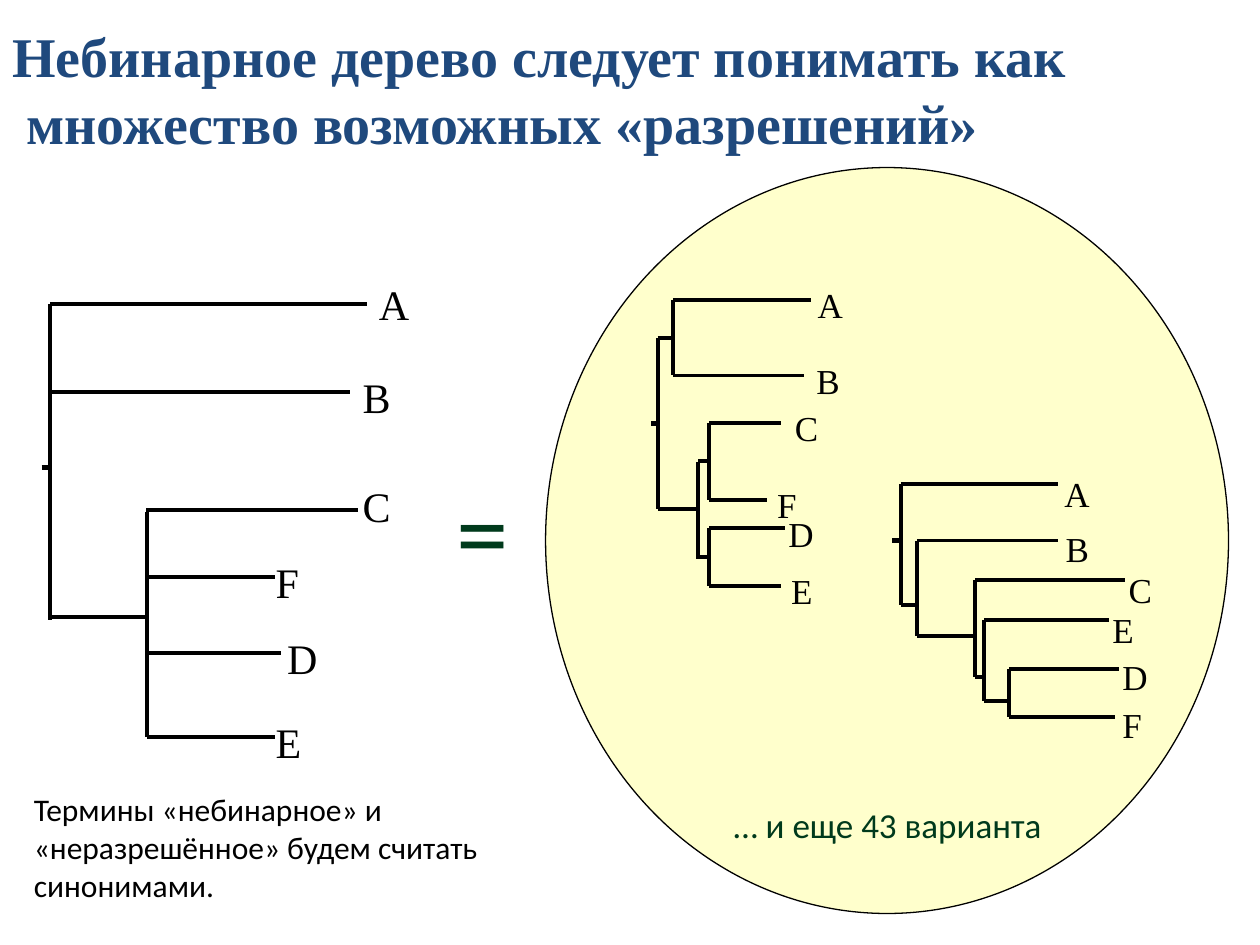
"""Build a slide that shows a non-binary tree as a set of possible resolutions."""
import pptx
import pptx.dml.color
import pptx.enum.shapes
import pptx.enum.text
import pptx.oxml.ns
import pptx.util
import lxml.etree

THEME = {
    "serif": "Times New Roman", "sans": "Calibri",
    "title": "1F497D", "accent": "003A1C", "ink": "000000", "pool": "FFFFCC",
    "title_size": 32, "equals_size": 60, "count_size": 20, "note_size": 18,
    "branch": 2.25, "root": 3, "outline": 0.75,
}
LETTER_EM = {"A": 0.72, "B": 0.67, "C": 0.67, "D": 0.72, "E": 0.61, "F": 0.56}
LEFT = pptx.enum.text.PP_ALIGN.LEFT
CENTER = pptx.enum.text.PP_ALIGN.CENTER
TOP = pptx.enum.text.MSO_ANCHOR.TOP
MIDDLE = pptx.enum.text.MSO_ANCHOR.MIDDLE

deck = pptx.Presentation()
deck.slide_width = pptx.util.Inches(10)
deck.slide_height = pptx.util.Inches(7.5)
column = deck.slide_width / 10
row = deck.slide_height / 7.5
slide = deck.slides.add_slide(deck.slide_layouts[6])


def add_text(lines, left, top, width, height, font, size, color,
             align=LEFT, anchor=TOP, wrap=False, bold=False, insets=(0.1, 0.05)):
    box = slide.shapes.add_textbox(
        round(left * column), round(top * row), round(width * column), round(height * row))
    frame = box.text_frame
    frame.word_wrap = wrap
    frame.vertical_anchor = anchor
    frame.margin_left = frame.margin_right = round(0.1 * column)
    frame.margin_top, frame.margin_bottom = (round(inset * row) for inset in insets)
    frame.text = "\n".join(lines)
    for paragraph in frame.paragraphs:
        paragraph.alignment = align
        paragraph.font.name = font
        paragraph.font.size = pptx.util.Pt(size)
        paragraph.font.bold = bold
        paragraph.font.color.rgb = pptx.dml.color.RGBColor.from_string(color)
    return frame


def add_branch(x1, y1, x2, y2, weight):
    branch = slide.shapes.add_connector(
        pptx.enum.shapes.MSO_CONNECTOR.STRAIGHT,
        round(x1 * column), round(y1 * row), round(x2 * column), round(y2 * row))
    branch.line.width = pptx.util.Pt(weight)
    branch.line.color.rgb = pptx.dml.color.RGBColor.from_string(THEME["ink"])
    lxml.etree.SubElement(branch._element.spPr, pptx.oxml.ns.qn("a:effectLst"))


pool = slide.shapes.add_shape(
    pptx.enum.shapes.MSO_SHAPE.OVAL,
    round(4.33 * column), round(1.33 * row), round(5.42 * column), round(5.92 * row))
pool.shadow.inherit = False
pool.fill.solid()
pool.fill.fore_color.rgb = pptx.dml.color.RGBColor.from_string(THEME["pool"])
pool.line.color.rgb = pptx.dml.color.RGBColor.from_string(THEME["ink"])
pool.line.width = pptx.util.Pt(THEME["outline"])

title = add_text(
    ["Небинарное дерево следует понимать как", "множество возможных «разрешений»"],
    0, 0.17, 10, 1.5, THEME["serif"], THEME["title_size"], THEME["title"],
    wrap=True, bold=True, insets=(0, 0))
title.paragraphs[1]._p.get_or_add_pPr().set("marL", str(pptx.util.Pt(8)))

add_text(["="], 3.33, 3.92, 1, 0.5, THEME["sans"], THEME["equals_size"],
         THEME["accent"], CENTER, MIDDLE, insets=(0.1, 0.05))
add_text(["… и еще 43 варианта"], 5.67, 6.23, 2.75, 0.58, THEME["sans"],
         THEME["count_size"], THEME["accent"], CENTER, MIDDLE, insets=(0.1, 0.05))

# stems: x, top, bottom; twigs: y, left, right; leaves: letter, left, top
trees = [
    {
        "size": 24,
        "root": (3.71, 0.33, 0.4),
        "stems": [(0.4, 2.41, 4.92), (1.17, 4.06, 5.85)],
        "twigs": [(2.41, 0.4, 2.91), (3.11, 0.4, 2.78), (4.9, 0.4, 1.16),
                  (4.05, 1.16, 2.84), (4.58, 1.17, 2.18), (5.18, 1.17, 2.23),
                  (5.85, 1.17, 2.18)],
        "leaves": [("A", 2.91, 2.11), ("B", 2.78, 2.85), ("C", 2.78, 3.71),
                   ("F", 2.09, 4.32), ("D", 2.18, 4.92), ("E", 2.09, 5.59)],
    },
    {
        "size": 20,
        "root": (3.36, 5.17, 5.22),
        "stems": [(5.22, 2.68, 4.04), (5.34, 2.38, 2.98), (5.54, 3.67, 4.44),
                  (5.63, 3.36, 3.97), (5.63, 4.19, 4.65)],
        "twigs": [(2.68, 5.22, 5.34), (2.38, 5.34, 6.44), (2.98, 5.34, 6.38),
                  (4.04, 5.22, 5.55), (3.66, 5.54, 5.63), (4.42, 5.54, 5.63),
                  (3.36, 5.63, 6.2), (3.97, 5.63, 6.09), (4.19, 5.63, 6.23),
                  (4.65, 5.63, 6.2)],
        "leaves": [("A", 6.39, 2.15), ("B", 6.38, 2.75), ("C", 6.21, 3.13),
                   ("F", 6.07, 3.74), ("D", 6.16, 3.97), ("E", 6.18, 4.42)],
    },
    {
        "size": 20,
        "root": (4.29, 7.08, 7.15),
        "stems": [(7.15, 3.84, 4.8), (7.28, 4.29, 5.05), (7.74, 4.6, 5.37),
                  (7.81, 4.92, 5.56), (8.01, 5.31, 5.69)],
        "twigs": [(3.84, 7.15, 8.4), (4.8, 7.15, 7.28), (4.29, 7.28, 8.4),
                  (5.05, 7.28, 7.74), (4.6, 7.74, 8.93), (5.37, 7.74, 7.81),
                  (4.92, 7.81, 8.8), (5.56, 7.81, 8.01), (5.31, 8.01, 8.88),
                  (5.69, 8.01, 8.85)],
        "leaves": [("A", 8.35, 3.65), ("B", 8.36, 4.09), ("C", 8.86, 4.41),
                   ("E", 8.73, 4.73), ("D", 8.81, 5.1), ("F", 8.81, 5.48)],
    },
]

for tree in trees:
    for x, top, bottom in tree["stems"]:
        add_branch(x, top, x, bottom, THEME["branch"])
    for y, left, right in tree["twigs"]:
        add_branch(left, y, right, y, THEME["branch"])
    y, left, right = tree["root"]
    add_branch(left, y, right, y, THEME["root"])
    em = tree["size"] / 72
    for letter, left, top in tree["leaves"]:
        add_text([letter], left, top, LETTER_EM[letter] * em + 0.2, 1.2 * em + 0.15,
                 THEME["serif"], tree["size"], THEME["ink"], insets=(0.1, 0.05))

add_text(["Термины «небинарное» и «неразрешённое» будем считать синонимами."],
         0.17, 6.17, 4.08, 1.05, THEME["sans"], THEME["note_size"], THEME["ink"],
         wrap=True, insets=(0.1, 0.05))

deck.save("out.pptx")
